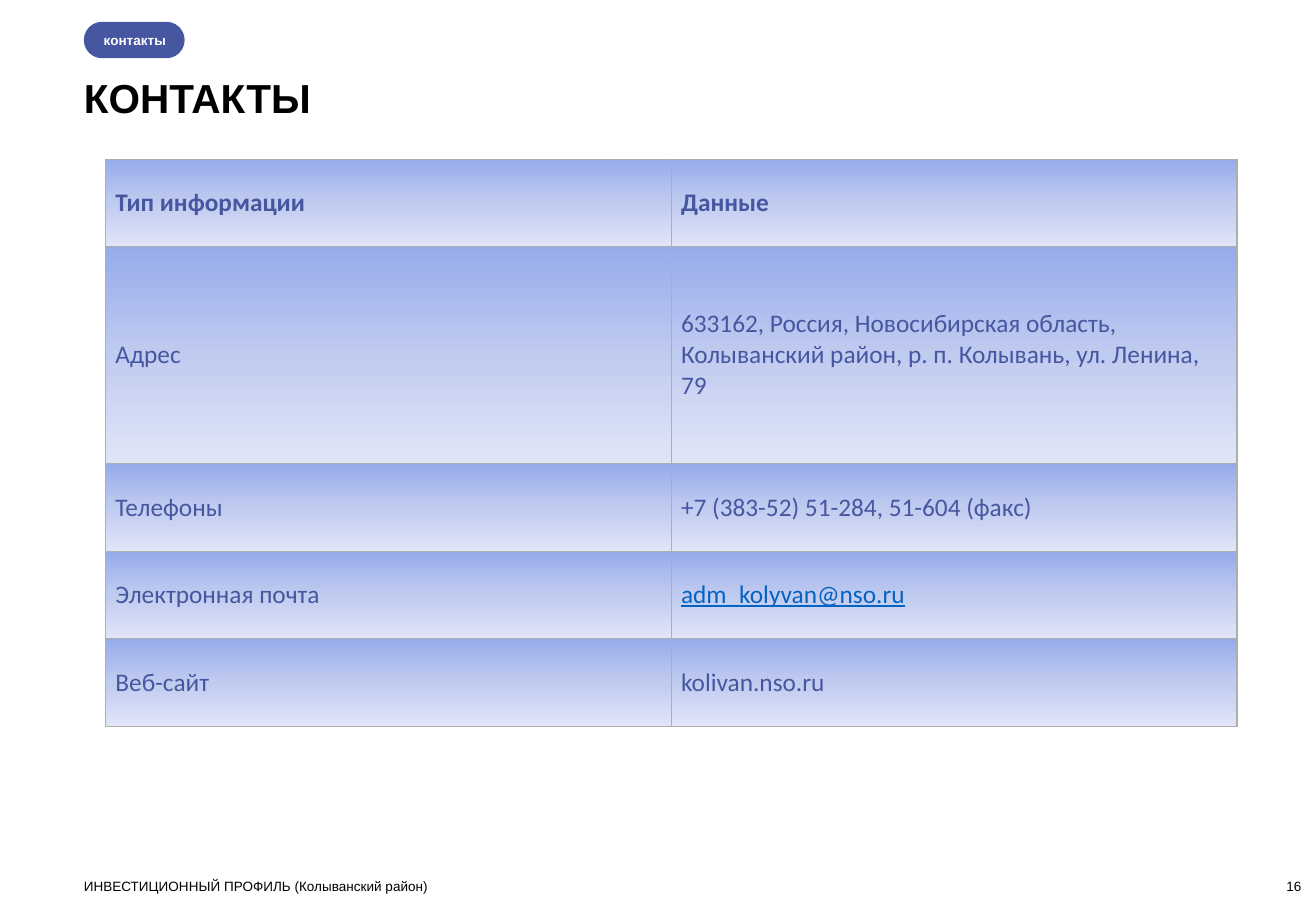
from lxml import etree
from pptx import Presentation
from pptx.dml.color import RGBColor
from pptx.enum.shapes import MSO_SHAPE
from pptx.enum.text import MSO_ANCHOR as ANCHOR, MSO_AUTO_SIZE as AUTO, PP_ALIGN as ALIGN
from pptx.oxml import parse_xml
from pptx.oxml.ns import nsdecls
from pptx.util import Inches, Pt

BLACK = RGBColor(0x00, 0x00, 0x00)
WHITE = RGBColor(0xFF, 0xFF, 0xFF)
INDIGO = RGBColor(0x47, 0x56, 0xA0)
LINK = RGBColor(0x05, 0x63, 0xC1)
BORDER = RGBColor(0xAE, 0xAE, 0xAE)
GRADIENT = [(0, RGBColor(0x96, 0xAB, 0xEA)),
            (50, RGBColor(0xC0, 0xCB, 0xF0)),
            (100, RGBColor(0xE0, 0xE5, 0xF7))]

LEFT = 0.69
EMAIL = "adm_kolyvan@nso.ru"
CONTACTS = [
    ("Тип информации", "Данные"),
    ("Адрес", "633162, Россия, Новосибирская область, Колыванский район, "
              "р. п. Колывань, ул. Ленина, 79"),
    ("Телефоны", "+7 (383-52) 51-284, 51-604 (факс)"),
    ("Электронная почта", EMAIL),
    ("Веб-сайт", "kolivan.nso.ru"),
]
ROW_HEIGHTS = [0.72, 1.79, 0.72, 0.72, 0.72]


def inches(*box):
    return [Inches(v) for v in box]


def set_text(tf, text, size, color, bold=False, align=ALIGN.LEFT,
             anchor=ANCHOR.TOP, inset=0):
    """Fill a text frame with one Arial paragraph; inset is on the left only."""
    tf.word_wrap = True
    tf.auto_size = AUTO.NONE
    tf.vertical_anchor = anchor
    tf.margin_left = Inches(inset)
    tf.margin_top = tf.margin_right = tf.margin_bottom = 0
    p = tf.paragraphs[0]
    p.text = text
    p.alignment = align
    style_font(p.runs[0].font, "Arial", size, color, bold)


def style_font(font, name, size, color, bold):
    font.name, font.size, font.bold = name, Pt(size), bold
    font.color.rgb = color


def add_title(s, box):
    title = s.shapes.title
    title.left, title.top, title.width, title.height = inches(*box)
    set_text(title.text_frame, "КОНТАКТЫ", 24, BLACK, bold=True)


def add_section_tag(s, box):
    sp = s.shapes.add_shape(MSO_SHAPE.ROUNDED_RECTANGLE, *inches(*box))
    sp.adjustments[0] = 0.5
    sp.shadow.inherit = False
    sp.fill.solid()
    sp.fill.fore_color.rgb = INDIGO
    sp.line.fill.background()
    set_text(sp.text_frame, "контакты", 8, WHITE, bold=True,
             anchor=ANCHOR.MIDDLE, inset=0.12)


def add_footer(s, box):
    x, y, w, h = box
    number_w = 0.8
    note = s.shapes.add_textbox(*inches(x, y, 8, h))
    set_text(note.text_frame, "ИНВЕСТИЦИОННЫЙ ПРОФИЛЬ (Колыванский район)", 8, BLACK)
    number = s.shapes.add_textbox(*inches(x + w - number_w, y, number_w, h))
    set_text(number.text_frame, "16", 8, BLACK, align=ALIGN.RIGHT, anchor=ANCHOR.BOTTOM)


def decorate_cell(cell):
    """Add the thin border on all sides and the vertical gradient fill."""
    tc_pr = cell._tc.get_or_add_tcPr()
    for side in "LRTB":
        tc_pr.append(parse_xml(
            f'<a:ln{side} {nsdecls("a")} w="{Pt(0.75)}"><a:solidFill>'
            f'<a:srgbClr val="{BORDER}"/></a:solidFill></a:ln{side}>'))
    stops = "".join(f'<a:gs pos="{pos * 1000}"><a:srgbClr val="{color}"/></a:gs>'
                    for pos, color in GRADIENT)
    tc_pr.append(parse_xml(
        f'<a:gradFill {nsdecls("a")} rotWithShape="1"><a:gsLst>{stops}</a:gsLst>'
        '<a:lin ang="5400000" scaled="0"/></a:gradFill>'))


def add_contacts_table(s, box):
    table = s.shapes.add_table(len(CONTACTS), 2, *inches(*box)).table
    table.horz_banding = False
    for col in table.columns:
        col.width = Inches(box[2] / 2)
    for i, (height, texts) in enumerate(zip(ROW_HEIGHTS, CONTACTS)):
        table.rows[i].height = Inches(height)
        for cell, text in zip(table.rows[i].cells, texts):
            cell.text = text
            cell.vertical_anchor = ANCHOR.MIDDLE
            cell.margin_left = cell.margin_right = Inches(0.08)
            cell.margin_top = cell.margin_bottom = Inches(0.04)
            font = cell.text_frame.paragraphs[0].runs[0].font
            is_link = text == EMAIL
            style_font(font, "Calibri", 15, LINK if is_link else INDIGO, i == 0)
            font.underline = is_link
            decorate_cell(cell)


def main():
    prs = Presentation()
    prs.slide_width, prs.slide_height = inches(10.83, 7.5)
    s = prs.slides.add_slide(prs.slide_layouts[5])
    add_title(s, (LEFT, 0.6, 10.02, 0.4))
    add_section_tag(s, (LEFT, 0.18, 0.83, 0.3))
    add_footer(s, (LEFT, 7.23, 10.02, 0.13))
    add_contacts_table(s, (0.87, 1.31, 9.31, sum(ROW_HEIGHTS)))
    prs.save("out.pptx")


if __name__ == "__main__":
    main()
